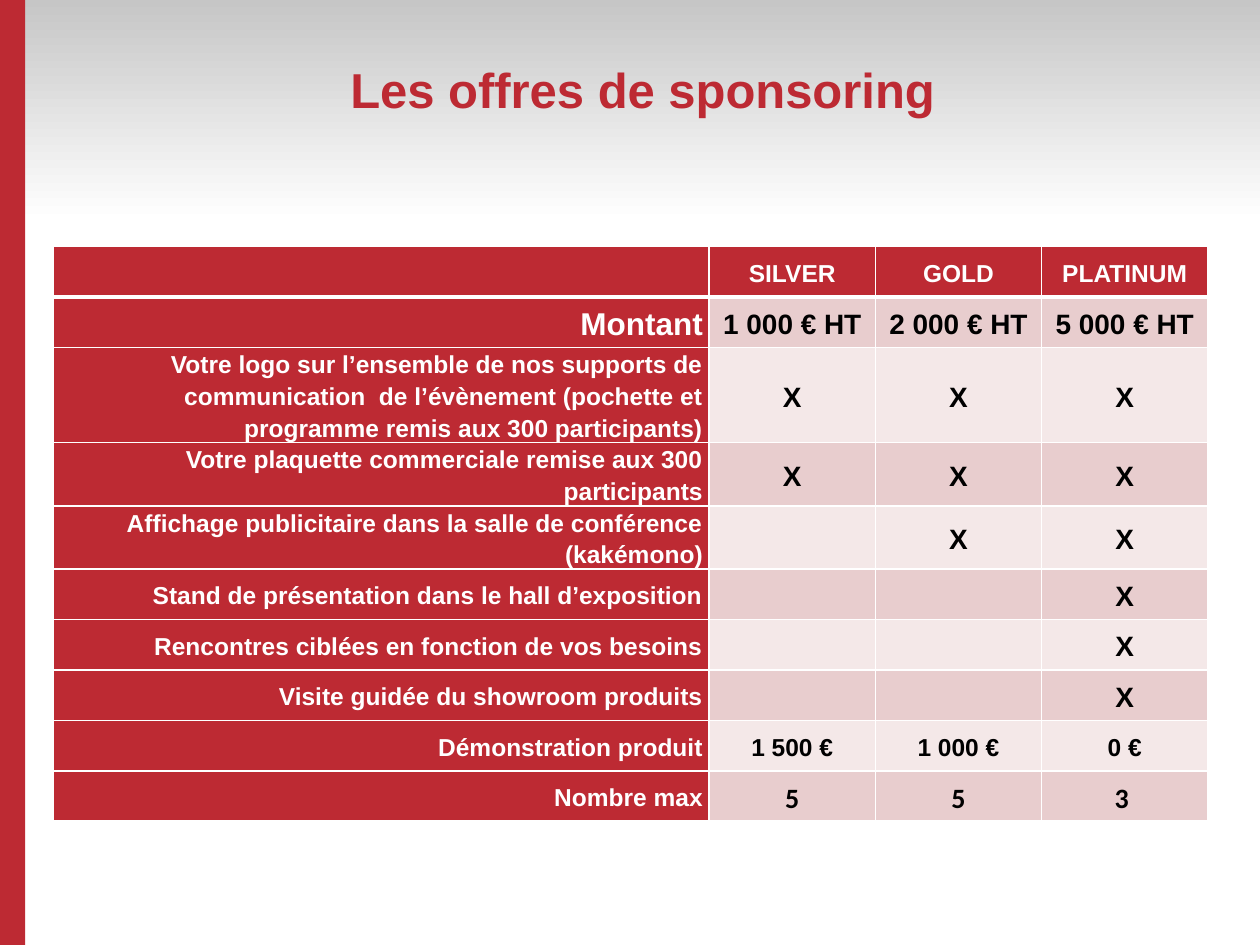
from lxml.etree import SubElement
from pptx import Presentation
from pptx.dml.color import RGBColor
from pptx.enum.shapes import MSO_SHAPE
from pptx.enum.text import MSO_ANCHOR, PP_ALIGN
from pptx.oxml.ns import qn
from pptx.util import Pt

COLORS = {
    "red": "BD2A33", "grey": "C0C0C0", "white": "FFFFFF", "black": "000000",
    "dark_band": "E8CDCE", "light_band": "F4E8E8",
}
OFFERS = [
    ["", "SILVER", "GOLD", "PLATINUM"],
    ["Montant", "1 000 € HT", "2 000 € HT", "5 000 € HT"],
    ["Votre logo sur l’ensemble de nos supports de communication  de "
     "l’évènement (pochette et programme remis aux 300 participants)", "X", "X", "X"],
    ["Votre plaquette commerciale remise aux 300 participants", "X", "X", "X"],
    ["Affichage publicitaire dans la salle de conférence (kakémono)", "", "X", "X"],
    ["Stand de présentation dans le hall d’exposition", "", "", "X"],
    ["Rencontres ciblées en fonction de vos besoins", "", "", "X"],
    ["Visite guidée du showroom produits", "", "", "X"],
    ["Démonstration produit", "1 500 €", "1 000 €", "0 €"],
    ["Nombre max", "5", "5", "3 "],
]
AMOUNT_ROW, DEMO_ROW, MAXIMUM_ROW = 1, 8, 9


def rgb(name):
    return RGBColor.from_string(COLORS[name])


def write_text(para, text, size, color, font="Arial"):
    span = para.add_run()
    span.text = text
    for key, value in {"size": Pt(size), "name": font, "bold": True}.items():
        setattr(span.font, key, value)
    span.font.color.rgb = rgb(color)


deck = Presentation()
deck.slide_width, deck.slide_height = Pt(720), Pt(540)
page = deck.slides.add_slide(deck.slide_layouts[5])

# Background: grey fade across the top, red bar down the left
bands = []
for width, height in [(720, 140), (14.4, 553.5)]:
    band = page.shapes.add_shape(
        MSO_SHAPE.RECTANGLE, Pt(0), Pt(-13.5), Pt(width), Pt(height))
    band.shadow.inherit = False
    band.line.fill.background()
    bands.append(band)
fade, side_bar = bands
fade.fill.gradient()
fade.fill.gradient_angle = 270
for stop, position, color in zip(fade.fill.gradient_stops, (0, 1), ("grey", "white")):
    stop.position = position
    stop.color.rgb = rgb(color)
side_bar.fill.solid()
side_bar.fill.fore_color.rgb = rgb("red")

# Title, brought in front of the background
title = page.shapes.title
page.shapes.element.append(title.element)
for key, value in {"left": 14.4, "top": 6, "width": 705.6, "height": 90}.items():
    setattr(title, key, Pt(value))
title.text_frame.vertical_anchor = MSO_ANCHOR.MIDDLE
heading = title.text_frame.paragraphs[0]
heading.alignment = PP_ALIGN.CENTER
write_text(heading, "Les offres de sponsoring", 28, "red")

# Table of offers
frame = page.shapes.add_table(
    len(OFFERS), len(OFFERS[0]), Pt(30.25), Pt(141), Pt(660), Pt(288))
table = frame.table
for column, width in zip(table.columns, (375, 95, 95, 95)):
    column.width = Pt(width)
for row in table.rows:
    row.height = Pt(28.8)
frame.height = Pt(334)

for r, values in enumerate(OFFERS):
    for c, text in enumerate(values):
        cell = table.cell(r, c)
        is_head = r == 0 or c == 0

        # White borders, thicker under the header row
        properties = cell._tc.get_or_add_tcPr()
        for side in "LRTB":
            thick = (r, side) in [(0, "B"), (1, "T")]
            line = SubElement(properties, qn(f"a:ln{side}"), w=str(Pt(3 if thick else 1)))
            fill = SubElement(line, qn("a:solidFill"))
            SubElement(fill, qn("a:srgbClr"), val=COLORS["white"])

        cell.fill.solid()
        band_color = "dark_band" if r % 2 else "light_band"
        cell.fill.fore_color.rgb = rgb("red" if is_head else band_color)
        cell_format = {
            "vertical_anchor": MSO_ANCHOR.MIDDLE, "margin_left": Pt(3.6),
            "margin_right": Pt(3.6), "margin_top": 0, "margin_bottom": 0,
        }
        for key, value in cell_format.items():
            setattr(cell, key, value)
        if not text:
            continue

        para = cell.text_frame.paragraphs[0]
        para.alignment = PP_ALIGN.RIGHT if c == 0 else PP_ALIGN.CENTER
        para.line_spacing = 1.15
        if r > AMOUNT_ROW and not (r >= DEMO_ROW and c in (1, 2)):
            para.space_before = para.space_after = Pt(6)
        size = 14 if is_head or r == DEMO_ROW else 16
        if (r, c) == (AMOUNT_ROW, 0):
            size = 18
        font = "Calibri" if r == MAXIMUM_ROW and c > 0 else "Arial"
        write_text(para, text, size, "white" if is_head else "black", font)

deck.save("out.pptx")
